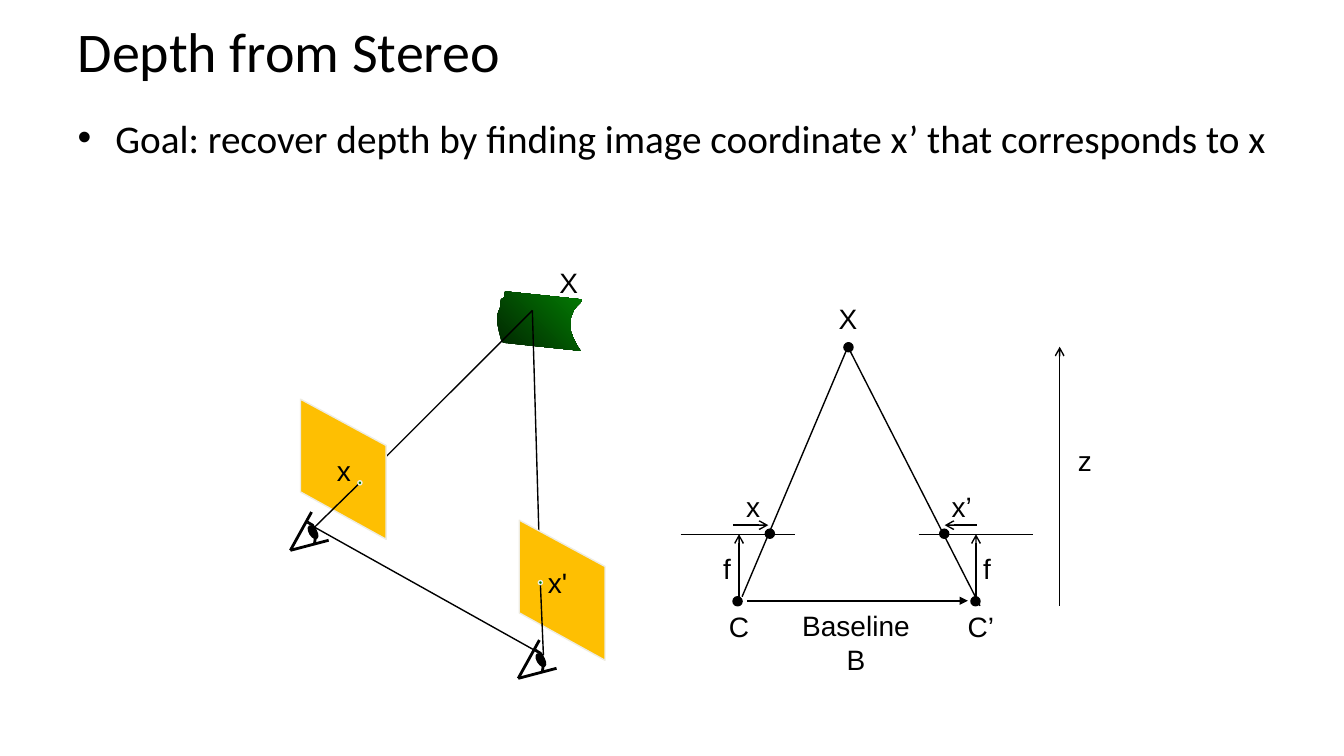
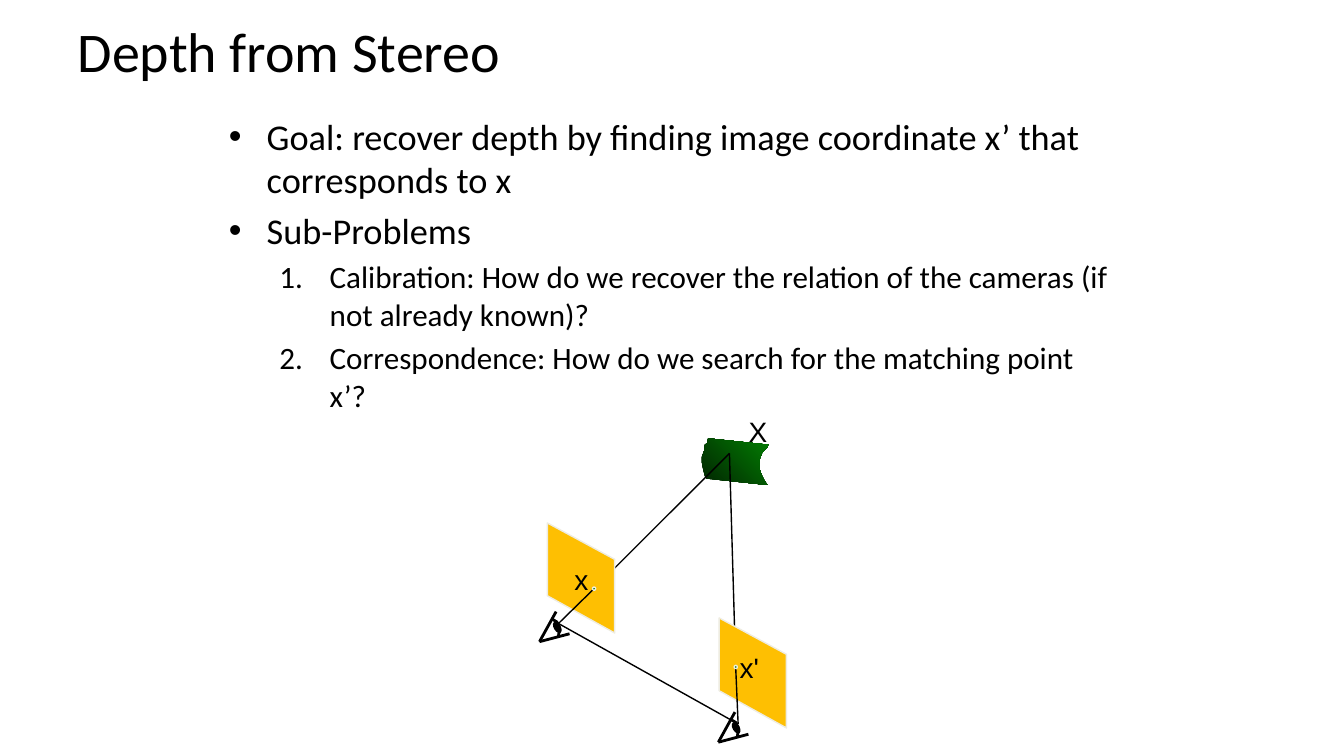
from dataclasses import dataclass

from pptx import Presentation
from pptx import util as u
from pptx.dml.color import RGBColor
from pptx.enum import shapes, text
from pptx.oxml import ns
from lxml import etree

EMU_PER_PX = 9144
BLACK = RGBColor(0x00, 0x00, 0x00)
DARK_GREEN = RGBColor(0x01, 0x25, 0x01)
GREEN = RGBColor(0x03, 0x7C, 0x03)
AMBER = RGBColor(0xFE, 0xBF, 0x02)
CREAM = RGBColor(0xEE, 0xEC, 0xE1)

TITLE = "Depth from Stereo"
GOAL = "Goal: recover depth by finding image coordinate x’ that corresponds to x"
SUB_PROBLEMS = [
    "Calibration: How do we recover the relation of the cameras (if not already known)?",
    "Correspondence: How do we search for the matching point x’?",
]

SURFACE = [
    (501, 289), (500, 295), (497, 297), (496, 305), (493, 313), (493, 319),
    (495, 329), (497, 337), (499, 340), (576, 348), (572, 342), (569, 336),
    (566, 328), (566, 316), (569, 308), (572, 304), (576, 300), (577, 297),
]
IMAGE_PLANE = [(298, 488), (383, 535), (383, 442), (298, 396)]
CORNEA = [(305, 518), (310, 521), (313, 527), (313, 532), (312, 539)]
LEFT_CAMERA = (0, 0)
RIGHT_CAMERA_PLANE = (217, 120)
RIGHT_CAMERA_EYE = (226, 127)


def px(length):
    return u.Emu(round(length * EMU_PER_PX))


@dataclass
class Frame:
    shapes: object
    scale: float = 1
    left: int = 0
    top: int = 0

    def at(self, x, y):
        return px(self.left + x * self.scale), px(self.top + y * self.scale)

    def size(self, length):
        return px(length * self.scale)


def shift(points, offset):
    return [(x + offset[0], y + offset[1]) for x, y in points]


def set_line(shape, colour, width):
    shape.line.color.rgb = colour
    shape.line.width = u.Pt(width)


def add_segment(frame, start, end, width=1, arrow=None):
    segment = frame.shapes.add_connector(
        shapes.MSO_CONNECTOR.STRAIGHT, *frame.at(*start), *frame.at(*end))
    set_line(segment, BLACK, width)
    properties = segment._element.spPr
    if arrow:
        outline = properties.find(ns.qn("a:ln"))
        etree.SubElement(outline, ns.qn("a:tailEnd"), type=arrow)
    etree.SubElement(properties, ns.qn("a:effectLst"))


def add_outline(frame, points, close=True):
    corners = [frame.at(*point) for point in points]
    builder = frame.shapes.build_freeform(*corners[0])
    builder.add_line_segments(corners[1:], close=close)
    outline = builder.convert_to_shape()
    outline.shadow.inherit = False
    return outline


def add_oval(frame, left, top, width, height, fill=BLACK, edge=BLACK, rotation=0):
    oval = frame.shapes.add_shape(
        shapes.MSO_SHAPE.OVAL, *frame.at(left, top),
        frame.size(width), frame.size(height))
    oval.shadow.inherit = False
    oval.fill.solid()
    oval.fill.fore_color.rgb = fill
    set_line(oval, edge, 1)
    oval.rotation = rotation


def add_label(frame, caption, x, y, width=90, height=44):
    centre_x, centre_y = frame.at(x, y)
    label = frame.shapes.add_textbox(
        centre_x - px(width / 2), centre_y - px(height / 2), px(width), px(height))
    label.text_frame.word_wrap = True
    label.text_frame.vertical_anchor = text.MSO_ANCHOR.MIDDLE
    paragraph = label.text_frame.paragraphs[0]
    paragraph.text = caption
    paragraph.alignment = text.PP_ALIGN.CENTER
    for run in paragraph.runs:
        run.font.name = "Arial"
        run.font.size = u.Pt(20)
        run.font.color.rgb = BLACK


def place(holder, left, top, width, height):
    holder.left, holder.top = px(left), px(top)
    holder.width, holder.height = px(width), px(height)
    holder.text_frame.auto_size = text.MSO_AUTO_SIZE.NONE


def set_font(paragraph, size):
    for run in paragraph.runs:
        run.font.name = "Calibri"
        run.font.size = u.Pt(size)
        run.font.color.rgb = BLACK


def add_titled_slide(deck):
    slide = deck.slides.add_slide(deck.slide_layouts[1])
    title = slide.shapes.title
    place(title, 67, 0, 1200, 100)
    title.text_frame.text = TITLE
    heading = title.text_frame.paragraphs[0]
    heading.alignment = text.PP_ALIGN.LEFT
    set_font(heading, 40)
    return slide


def number_paragraph(paragraph):
    paragraph.level = 1
    properties = paragraph._p.get_or_add_pPr()
    properties.set("marL", str(px(100)))
    properties.set("indent", str(px(-50)))
    etree.SubElement(properties, ns.qn("a:buFont"), typeface="+mj-lt")
    etree.SubElement(properties, ns.qn("a:buAutoNum"), type="arabicPeriod")


def fill_body(slide, box, bullets, bullet_size, numbered=(), numbered_size=0):
    body = slide.placeholders[1]
    place(body, *box)
    frame = body.text_frame
    frame.text = "\n".join([*bullets, *numbered])
    for index, paragraph in enumerate(frame.paragraphs):
        is_bullet = index < len(bullets)
        size = bullet_size if is_bullet else numbered_size
        paragraph.space_before = u.Pt(round(size * 0.2, 1) if index else 0)
        if not is_bullet:
            number_paragraph(paragraph)
        set_font(paragraph, size)


def add_surface(frame):
    surface = add_outline(frame, SURFACE)
    surface.line.fill.background()
    surface.fill.gradient()
    surface.fill.gradient_angle = 45
    for stop, colour in zip(surface.fill.gradient_stops, (DARK_GREEN, GREEN)):
        stop.color.rgb = colour


def add_image_plane(frame, offset):
    plane = add_outline(frame, shift(IMAGE_PLANE, offset))
    plane.fill.solid()
    plane.fill.fore_color.rgb = AMBER
    set_line(plane, CREAM, 1)


def add_eye(frame, offset):
    cornea = add_outline(frame, shift(CORNEA, offset), close=False)
    cornea.fill.background()
    set_line(cornea, BLACK, 2)
    upper_lid, corner, lower_lid, pupil = shift(
        [(309, 508), (288, 546), (326, 536), (307, 521)], offset)
    add_segment(frame, upper_lid, corner, 2)
    add_oval(frame, *pupil, 7, 14, rotation=329)
    add_segment(frame, corner, lower_lid, 2)


def draw_scene(frame):
    left_eye, right_eye = (312, 523), (539, 650)
    left_image, right_image = (357, 479), (536, 580)
    surface_point = (528, 308)

    add_surface(frame)
    add_segment(frame, left_eye, right_eye)
    add_segment(frame, left_image, surface_point)
    add_image_plane(frame, LEFT_CAMERA)
    add_segment(frame, right_image, surface_point)
    add_image_plane(frame, RIGHT_CAMERA_PLANE)
    add_segment(frame, left_eye, left_image)
    add_segment(frame, right_eye, right_image)
    for offset in (LEFT_CAMERA, RIGHT_CAMERA_EYE):
        add_eye(frame, offset)
    for left, top in ((534, 576), (355, 477)):
        add_oval(frame, left, top, 4, 4, GREEN, CREAM)
    for caption, x, y in (("X", 564, 280), ("x", 341, 467), ("x'", 553, 578)):
        add_label(frame, caption, x, y)


def draw_triangulation(frame):
    apex = (841, 344)
    for start, end in (
        ((675, 530), (789, 530)),
        ((911, 530), (1025, 530)),
        ((736, 592), apex),
        ((972, 601), apex),
    ):
        add_segment(frame, start, end)
    for start, end in (
        ((733, 592), (733, 530)),
        ((968, 592), (968, 530)),
        ((727, 521), (762, 521)),
        ((969, 521), (937, 521)),
        ((1051, 601), (1051, 344)),
    ):
        add_segment(frame, start, end, arrow="arrow")
    add_segment(frame, (741, 596), (960, 596), 1.5, "triangle")
    for left, top in ((727, 592), (963, 592), (837, 340), (759, 525), (932, 525)):
        add_oval(frame, left, top, 9, 9)
    for caption, x, y in (
        ("X", 841, 316), ("x", 747, 502), ("x’", 954, 502), ("z", 1076, 457),
        ("f", 721, 564), ("f", 979, 564), ("C", 733, 621), ("C’", 973, 621),
    ):
        add_label(frame, caption, x, y)
    add_label(frame, "Baseline\nB", 849, 637, 140, 77)


def main():
    deck = Presentation()
    deck.slide_width, deck.slide_height = u.Inches(13.33), u.Inches(7.5)

    goal = add_titled_slide(deck)
    fill_body(goal, (67, 108, 1200, 562), [GOAL], 28)
    draw_triangulation(Frame(goal.shapes))
    draw_scene(Frame(goal.shapes))

    problems = add_titled_slide(deck)
    fill_body(problems, (217, 108, 900, 292), [GOAL, "Sub-Problems"], 25.9,
              SUB_PROBLEMS, 22.2)
    draw_scene(Frame(problems.shapes, 0.785, 309, 208))

    deck.save("out.pptx")


if __name__ == "__main__":
    main()
